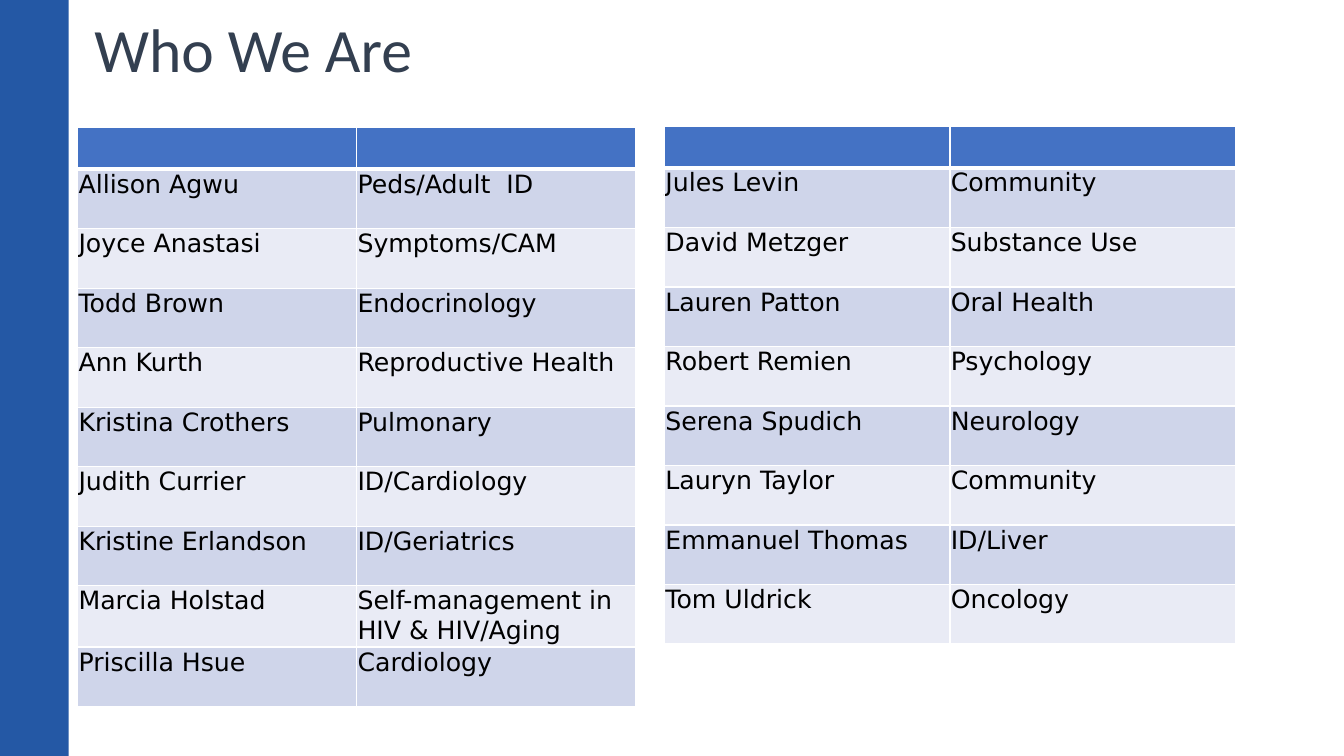
from dataclasses import dataclass

from lxml import etree
from pptx import Presentation
from pptx.dml.color import RGBColor
from pptx.enum.shapes import MSO_SHAPE
from pptx.enum.text import MSO_ANCHOR
from pptx.oxml.ns import qn
from pptx.util import Cm, Pt

RECT = MSO_SHAPE.RECTANGLE
MIDDLE, TOP = MSO_ANCHOR.MIDDLE, MSO_ANCHOR.TOP


@dataclass(frozen=True)
class Theme:
    sidebar: str = "2458A5"
    title: str = "333F50"
    text: str = "000000"
    header: str = "4472C4"
    bands: tuple = ("CFD5EA", "E9EBF5")
    border: str = "FFFFFF"
    title_font: str = "Calibri"
    body_font: str = "DejaVu Sans"
    title_size: int = 44
    body_size: int = 18
    thin: int = 1
    thick: int = 3


class SlideBuilder:
    def __init__(self, slide, theme):
        self.s = slide
        self.theme = theme

    def style_runs(self, tf, font, size, color):
        for p in tf.paragraphs:
            for r in p.runs:
                r.font.name = font
                r.font.size = Pt(size)
                r.font.bold = False
                r.font.color.rgb = RGBColor.from_string(color)

    def bar(self, x, y, w, h):
        sp = self.s.shapes.add_shape(RECT, Cm(x), Cm(y), Cm(w), Cm(h))
        sp.shadow.inherit = False
        sp.fill.solid()
        sp.fill.fore_color.rgb = RGBColor.from_string(self.theme.sidebar)
        sp.line.fill.background()

    def title(self, text, x, y, w, h):
        tf = self.s.shapes.add_textbox(Cm(x), Cm(y), Cm(w), Cm(h)).text_frame
        tf.word_wrap = True
        tf.vertical_anchor = MIDDLE
        tf.text = text
        tf.paragraphs[0].line_spacing = 0.9
        self.style_runs(tf, self.theme.title_font, self.theme.title_size, self.theme.title)

    def borders(self, cell, top, bottom):
        thin = self.theme.thin
        tcPr = cell._tc.get_or_add_tcPr()
        for side, width in (("L", thin), ("R", thin), ("T", top), ("B", bottom)):
            ln = etree.SubElement(tcPr, qn(f"a:ln{side}"), w=str(Pt(width)))
            fill = etree.SubElement(ln, qn("a:solidFill"))
            etree.SubElement(fill, qn("a:srgbClr"), val=self.theme.border)

    def cell(self, cell, text, fill, top, bottom):
        self.borders(cell, top, bottom)
        cell.fill.solid()
        cell.fill.fore_color.rgb = RGBColor.from_string(fill)
        if text:
            cell.margin_left = cell.margin_right = cell.margin_top = Cm(0.02)
            cell.margin_bottom = 0
            cell.vertical_anchor = TOP
            cell.text_frame.text = text
            self.style_runs(cell.text_frame, self.theme.body_font,
                            self.theme.body_size, self.theme.text)

    def table(self, members, x, y, col_w, header_h=1.04, row_h=1.5):
        t = self.theme
        rows = [("", "")] + members
        height = header_h + row_h * len(members)
        table = self.s.shapes.add_table(len(rows), 2, Cm(x), Cm(y),
                                        Cm(2 * col_w), Cm(height)).table
        for column in table.columns:
            column.width = Cm(col_w)
        for i, values in enumerate(rows):
            table.rows[i].height = Cm(row_h if i else header_h)
            fill = t.bands[(i - 1) % 2] if i else t.header
            top = t.thick if i == 1 else t.thin
            bottom = t.thin if i else t.thick
            for j, text in enumerate(values):
                self.cell(table.cell(i, j), text, fill, top, bottom)


LEFT_MEMBERS = [
    ("Allison Agwu", "Peds/Adult  ID"),
    ("Joyce Anastasi", "Symptoms/CAM"),
    ("Todd Brown", "Endocrinology"),
    ("Ann Kurth", "Reproductive Health"),
    ("Kristina Crothers", "Pulmonary"),
    ("Judith Currier", "ID/Cardiology"),
    ("Kristine Erlandson", "ID/Geriatrics"),
    ("Marcia Holstad", "Self-management in HIV & HIV/Aging"),
    ("Priscilla Hsue", "Cardiology"),
]
RIGHT_MEMBERS = [
    ("Jules Levin", "Community"),
    ("David Metzger", "Substance Use"),
    ("Lauren Patton", "Oral Health"),
    ("Robert Remien", "Psychology"),
    ("Serena Spudich", "Neurology"),
    ("Lauryn Taylor", "Community"),
    ("Emmanuel Thomas", "ID/Liver"),
    ("Tom Uldrick", "Oncology"),
]


def main():
    prs = Presentation()
    prs.slide_width, prs.slide_height = Cm(33.87), Cm(19.05)
    builder = SlideBuilder(prs.slides.add_slide(prs.slide_layouts[6]), Theme())

    # Sidebar and title
    builder.bar(0, 0, 1.73, 19.05)
    builder.title("Who We Are", 2.13, -0.51, 29.21, 3.68)

    # Member tables
    builder.table(LEFT_MEMBERS, 1.96, 3.22, 7.03)
    builder.table(RIGHT_MEMBERS, 16.75, 3.19, 7.19)

    prs.save("out.pptx")


if __name__ == "__main__":
    main()
